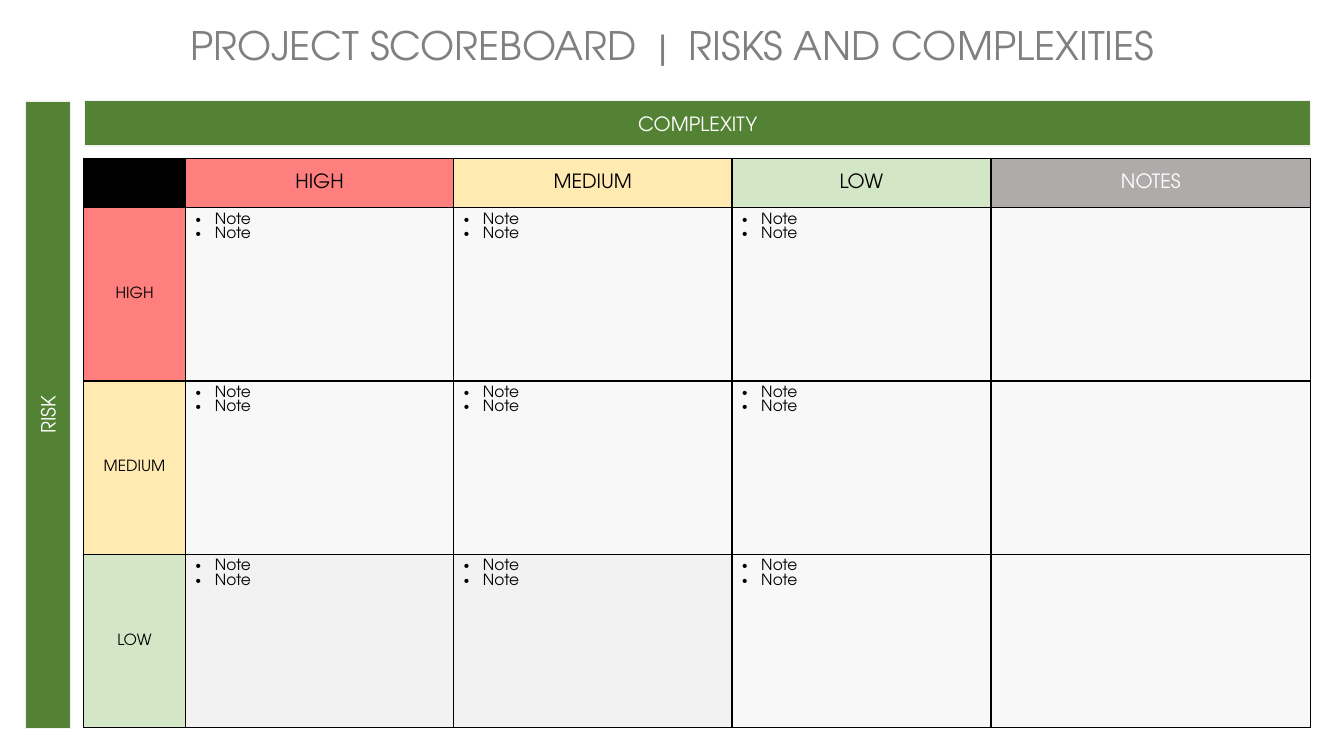
from dataclasses import dataclass

from lxml import etree
from pptx import Presentation
from pptx.dml.color import RGBColor
from pptx.enum.shapes import MSO_SHAPE
from pptx.enum.text import MSO_ANCHOR, MSO_AUTO_SIZE, PP_ALIGN
from pptx.oxml.ns import qn
from pptx.util import Inches, Pt

RECTANGLE = MSO_SHAPE.RECTANGLE
MIDDLE, TOP = MSO_ANCHOR.MIDDLE, MSO_ANCHOR.TOP
CENTER, LEFT = PP_ALIGN.CENTER, PP_ALIGN.LEFT
FIT_SHAPE = MSO_AUTO_SIZE.SHAPE_TO_FIT_TEXT
TITLE_ONLY = 5


@dataclass(frozen=True)
class Theme:
    font: str = "TeX Gyre Adventor"
    title_size: int = 28
    heading_size: int = 14
    body_size: int = 11
    title: str = "808080"
    banner: str = "548235"
    banner_line: str = "F2F2F2"
    black: str = "000000"
    white: str = "FFFFFF"
    notes: str = "AFABAB"
    cell: str = "F2F2F2"
    high: str = "FF0000"
    medium: str = "FFD966"
    low: str = "A9D18E"


THEME = Theme()
LEVELS = [("HIGH", THEME.high), ("MEDIUM", THEME.medium), ("LOW", THEME.low)]
NOTES = ["Note", "Note"]
COLUMN_WIDTHS = [1.01, 2.66, 2.76, 2.57, 3.17]
ROW_HEIGHTS = [0.49, 1.72, 1.72, 1.72]


def write_text(frame, lines, size, color, align=CENTER):
    """Fill a text frame with one paragraph per line."""
    frame.word_wrap = True
    frame.text = "\n".join(lines)
    for paragraph in frame.paragraphs:
        paragraph.alignment = align
        paragraph.font.name = THEME.font
        paragraph.font.size = Pt(size)
        paragraph.font.color.rgb = RGBColor.from_string(color)


def add_title(page, text):
    title = page.shapes.title
    title.left, title.top = Inches(0), Inches(0.16)
    title.width, title.height = Inches(13.33), Inches(0.57)
    write_text(title.text_frame, [text], THEME.title_size, THEME.title)
    title.text_frame.vertical_anchor = TOP
    title.text_frame.auto_size = FIT_SHAPE


def add_banner(page, text, left, top, width, rotation=0):
    banner = page.shapes.add_shape(
        RECTANGLE, Inches(left), Inches(top), Inches(width), Inches(0.45))
    banner.rotation = rotation
    banner.shadow.inherit = False
    banner.fill.solid()
    banner.fill.fore_color.rgb = RGBColor.from_string(THEME.banner)
    banner.line.color.rgb = RGBColor.from_string(THEME.banner_line)
    banner.line.width = Pt(1)
    banner.text_frame.vertical_anchor = MIDDLE
    write_text(banner.text_frame, [text], THEME.heading_size, THEME.white)


def style_cell(cell, color, opacity=100):
    """Give a cell black borders and a fill of the given opacity."""
    properties = cell._tc.get_or_add_tcPr()
    for side in ("a:lnL", "a:lnR", "a:lnT", "a:lnB"):
        border = etree.SubElement(properties, qn(side), w=str(Pt(1)))
        solid = etree.SubElement(border, qn("a:solidFill"))
        etree.SubElement(solid, qn("a:srgbClr"), val=THEME.black)
    cell.fill.solid()
    cell.fill.fore_color.rgb = RGBColor.from_string(color)
    if opacity < 100:
        shade = properties.find(qn("a:solidFill")).find(qn("a:srgbClr"))
        etree.SubElement(shade, qn("a:alpha"), val=str(opacity * 1000))


def label_cell(cell, text, size, color=THEME.black):
    cell.vertical_anchor = MIDDLE
    write_text(cell.text_frame, [text], size, color)


def bullet_cell(cell, lines):
    write_text(cell.text_frame, lines, THEME.body_size, THEME.black, LEFT)
    for paragraph in cell.text_frame.paragraphs:
        properties = paragraph._p.get_or_add_pPr()
        properties.set("marL", str(Inches(0.19)))
        properties.set("indent", str(-Inches(0.19)))
        bullet_font = etree.Element(qn("a:buFont"), typeface="Arial")
        bullet = etree.Element(qn("a:buChar"), char="•")
        defaults = properties.find(qn("a:defRPr"))
        defaults.addprevious(bullet_font)
        defaults.addprevious(bullet)


def add_matrix(page):
    frame = page.shapes.add_table(
        len(ROW_HEIGHTS), len(COLUMN_WIDTHS), Inches(0.83), Inches(1.57),
        Inches(sum(COLUMN_WIDTHS)), Inches(sum(ROW_HEIGHTS)))
    table = frame.table
    for column, width in zip(table.columns, COLUMN_WIDTHS):
        column.width = Inches(width)
    for row, height in zip(table.rows, ROW_HEIGHTS):
        row.height = Inches(height)

    # Corner and notes heading
    notes_column = len(COLUMN_WIDTHS) - 1
    style_cell(table.cell(0, 0), THEME.black)
    style_cell(table.cell(0, notes_column), THEME.notes)
    label_cell(table.cell(0, notes_column), "NOTES", THEME.heading_size, THEME.white)

    # Level headings across the top and down the side
    for index, (level, color) in enumerate(LEVELS, start=1):
        for cell, size in ((table.cell(0, index), THEME.heading_size),
                           (table.cell(index, 0), THEME.body_size)):
            style_cell(cell, color, 50)
            label_cell(cell, level, size)

    # Notes for each pair of levels; the last column stays empty
    for row in range(1, len(ROW_HEIGHTS)):
        for column in range(1, len(COLUMN_WIDTHS)):
            cell = table.cell(row, column)
            style_cell(cell, THEME.cell, 95 if row == 3 and column < 3 else 50)
            if column < notes_column:
                bullet_cell(cell, NOTES)


def main():
    deck = Presentation()
    deck.slide_width, deck.slide_height = Inches(13.33), Inches(7.5)
    page = deck.slides.add_slide(deck.slide_layouts[TITLE_ONLY])

    add_title(page, "PROJECT SCOREBOARD  |  RISKS AND COMPLEXITIES")
    add_banner(page, "COMPLEXITY", 0.84, 1, 12.16)
    add_matrix(page)
    add_banner(page, "RISK", -2.64, 3.89, 6.23, rotation=270)
    deck.save("out.pptx")


if __name__ == "__main__":
    main()
